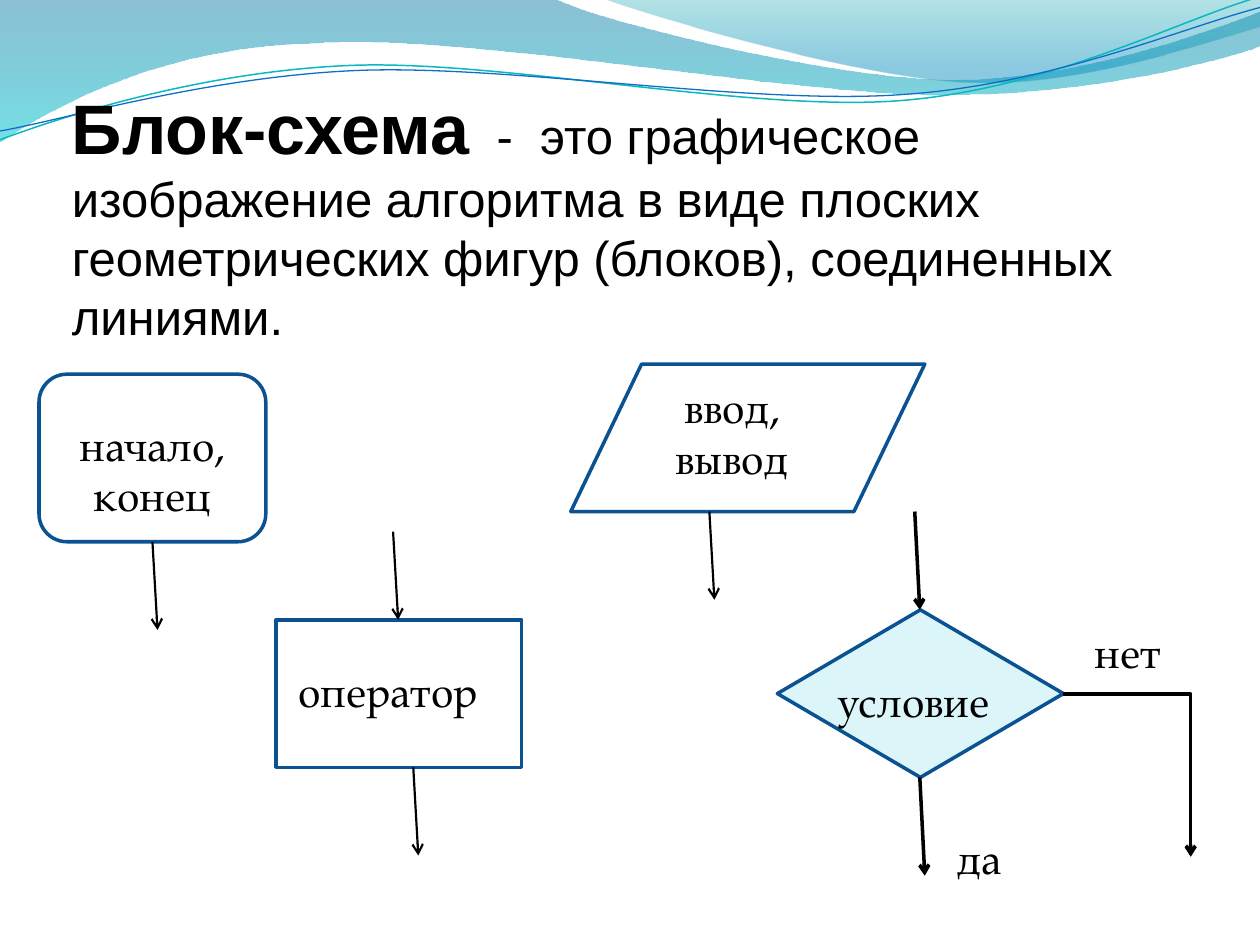
"""Build a slide that defines a flowchart and shows its basic blocks."""
import math
from pptx import Presentation
from pptx import util as u
from pptx.dml.color import RGBColor
from pptx.enum import shapes, text
from pptx.oxml.ns import qn
from lxml import etree

THEME = {
    "ink": "000000", "outline": "0B5292", "tint": "DBF5F9",
    "head": "Arial", "label": "TeX Gyre Pagella",
    "term_pt": 40, "gap_pt": 18, "body_pt": 28, "label_pt": 24,
    "thin": 1.25, "thick": 2,
}

DEFINITION = [
    ("Блок-схема ", "head", "term_pt", True),
    (" ", "label", "gap_pt", False),
    ("-  это графическое изображение алгоритма в виде плоских геометрических "
     "фигур (блоков), соединенных линиями.", "head", "body_pt", False),
]

WAVES = [
    ([[(0, 0)],
      [(4.4, -0.01)],
      [(4.76, 0.17), (6.64, 0.63), (7.58, 0.63)],
      [(8.53, 0.63), (9.58, 0.26), (10, 0.09)],
      [(10.01, 0.36)],
      [(9.83, 0.44), (8.7, 0.76), (7.46, 0.75)],
      [(6.22, 0.75), (3.82, 0.28), (2.57, 0.34)],
      [(1.29, 0.36), (0.46, 0.83), (-0.01, 1.13)]],
     [(0, "0074A1", 45), (1, "00C6CF", 55)]),
    ([[(4.79, -0.01)],
      [(5.09, 0.11), (6.82, 0.62), (7.69, 0.65)],
      [(8.56, 0.69), (9.61, 0.32), (10, 0.21)],
      [(10, 0)]],
     [(0, "00A1A9", 30), (0.8, "008BBF", 45)]),
]
TILT = -2.7
RIBBONS = [
    ([[(0, 1.11)],
      [(0.48, 0.93), (1.58, 0.57), (2.77, 0.52)],
      [(3.95, 0.47), (5.93, 0.89), (7.13, 0.8)],
      [(8.33, 0.71), (9.38, 0.15), (9.98, -0.02)]], (4.99, 0.57), "0AB8BF", 0.85),
    ([[(0, 1.04)],
      [(0.47, 0.96), (1.64, 0.61), (2.83, 0.56)],
      [(4.03, 0.51), (5.97, 0.84), (7.17, 0.75)],
      [(8.36, 0.67), (9.41, 0.21), (10, 0.06)]], (5, 0.59), "0F6FC6", 0.75),
]

MSO = shapes.MSO_SHAPE
BLOCKS = [
    (MSO.FLOWCHART_ALTERNATE_PROCESS, (0.31, 2.97, 1.8, 1.33), None),
    (MSO.FLOWCHART_DATA, (4.53, 2.89, 2.81, 1.17), None),
    (MSO.FLOWCHART_PROCESS, (2.19, 4.92, 1.95, 1.17), None),
    (MSO.FLOWCHART_DECISION, (6.17, 4.84, 2.27, 1.33), "tint"),
]
LABELS = [
    ("начало,\nконец", (0.47, 3.28, 1.48, 0.91), True),
    ("ввод,\nвывод", (5.13, 2.98, 1.36, 1.05), True),
    ("оператор", (2.27, 5.23, 1.72, 0.5), False),
    ("условие", (6.56, 5.31, 1.64, 0.5), False),
    ("нет", (8.59, 4.92, 0.86, 0.5), False),
    ("да", (7.5, 6.56, 0.86, 0.5), False),
]
DROPS = [
    (1.21, 4.3, 0.7, "thin"), (5.63, 4.06, 0.7, "thin"),
    (3.28, 6.09, 0.7, "thin"), (3.12, 4.22, 0.7, "thin"),
    (7.3, 6.17, 0.78, "thick"), (7.26, 4.06, 0.78, "thick"),
]
SLANT = 0.04
BRANCH = (8.44, 5.51, 9.45, 6.8)


def rgb(name):
    return RGBColor.from_string(THEME.get(name, name))


def inches(values):
    return [u.Inches(v) for v in values]


def style(r, font, size, bold=False):
    r.font.name, r.font.size, r.font.bold = THEME[font], u.Pt(THEME[size]), bold
    r.font.color.rgb = rgb("ink")


def turn(point, centre, degrees):
    a = math.radians(degrees)
    dx, dy = point[0] - centre[0], point[1] - centre[1]
    return (centre[0] + dx * math.cos(a) - dy * math.sin(a),
            centre[1] + dx * math.sin(a) + dy * math.cos(a))


def add_curve(s, segments, close):
    anchors = [inches(seg[-1]) for seg in segments]
    fb = s.shapes.build_freeform(*anchors[0])
    fb.add_line_segments(anchors[1:], close=close)
    sp = fb.convert_to_shape()
    sp.shadow.inherit = False
    lines = list(sp._element.spPr.iter(qn("a:lnTo")))
    for line, seg in zip(lines, segments[1:]):
        if len(seg) == 3:
            bez = etree.Element(qn("a:cubicBezTo"))
            for x, y in (inches(pt) for pt in seg):
                pt = etree.SubElement(bez, qn("a:pt"))
                pt.set("x", str(x - sp.left))
                pt.set("y", str(y - sp.top))
            line.getparent().replace(line, bez)
    return sp


def add_wave(s, segments, stops):
    sp = add_curve(s, segments, True)
    sp.line.fill.background()
    sp.fill.gradient()
    sp.fill.gradient_angle = 270
    for stop, (pos, color, _) in zip(sp.fill.gradient_stops, stops):
        stop.position = pos
        stop.color.rgb = rgb(color)
    for clr, (_, _, alpha) in zip(sp._element.spPr.iter(qn("a:srgbClr")), stops):
        etree.SubElement(clr, qn("a:alpha")).set("val", str(alpha * 1000))


def add_ribbon(s, segments, centre, color, width):
    level = [[turn(pt, centre, -TILT) for pt in seg] for seg in segments]
    sp = add_curve(s, level, False)
    sp.rotation = TILT
    sp.fill.background()
    sp.line.color.rgb, sp.line.width = rgb(color), u.Pt(width)


def add_definition(s):
    sp = s.shapes.title
    sp.left, sp.top, sp.width, sp.height = inches((0.47, 0.62, 9.14, 2.19))
    tf = sp.text_frame
    tf.word_wrap, tf.auto_size = True, text.MSO_AUTO_SIZE.NONE
    tf.vertical_anchor = text.MSO_ANCHOR.TOP
    p = tf.paragraphs[0]
    p.alignment = text.PP_ALIGN.LEFT
    for words, font, size, bold in DEFINITION:
        r = p.add_run()
        r.text = words
        style(r, font, size, bold)


def add_block(s, kind, box, fill):
    sp = s.shapes.add_shape(kind, *inches(box))
    sp.shadow.inherit = False
    sp.line.color.rgb, sp.line.width = rgb("outline"), u.Pt(THEME["thick"])
    if fill:
        sp.fill.solid()
        sp.fill.fore_color.rgb = rgb(fill)
    else:
        sp.fill.background()


def add_label(s, words, box, centred):
    tf = s.shapes.add_textbox(*inches(box)).text_frame
    tf.word_wrap = True
    p = tf.paragraphs[0]
    p.text = words
    p.alignment = text.PP_ALIGN.CENTER if centred else text.PP_ALIGN.LEFT
    for r in p.runs:
        style(r, "label", "label_pt")


def add_arrow(s, ends, weight, bent=False):
    kind = shapes.MSO_CONNECTOR.ELBOW if bent else shapes.MSO_CONNECTOR.STRAIGHT
    c = s.shapes.add_connector(kind, *inches(ends))
    c.line.color.rgb, c.line.width = rgb("ink"), u.Pt(THEME[weight])
    spPr = c._element.spPr
    if bent:
        spPr.find(qn("a:prstGeom")).set("prst", "bentConnector2")
    etree.SubElement(spPr.find(qn("a:ln")), qn("a:tailEnd")).set("type", "arrow")
    etree.SubElement(spPr, qn("a:effectLst"))


def main():
    prs = Presentation()
    prs.slide_width, prs.slide_height = inches((10, 7.5))
    s = prs.slides.add_slide(prs.slide_layouts[5])
    for wave in WAVES:
        add_wave(s, *wave)
    for ribbon in RIBBONS:
        add_ribbon(s, *ribbon)
    title = s.shapes.title._element
    title.getparent().append(title)
    add_definition(s)
    for block in BLOCKS:
        add_block(s, *block)
    for label in LABELS:
        add_label(s, *label)
    for x, y, drop, weight in DROPS:
        add_arrow(s, (x, y, x + SLANT, y + drop), weight)
    add_arrow(s, BRANCH, "thick", bent=True)
    prs.save("out.pptx")


if __name__ == "__main__":
    main()
